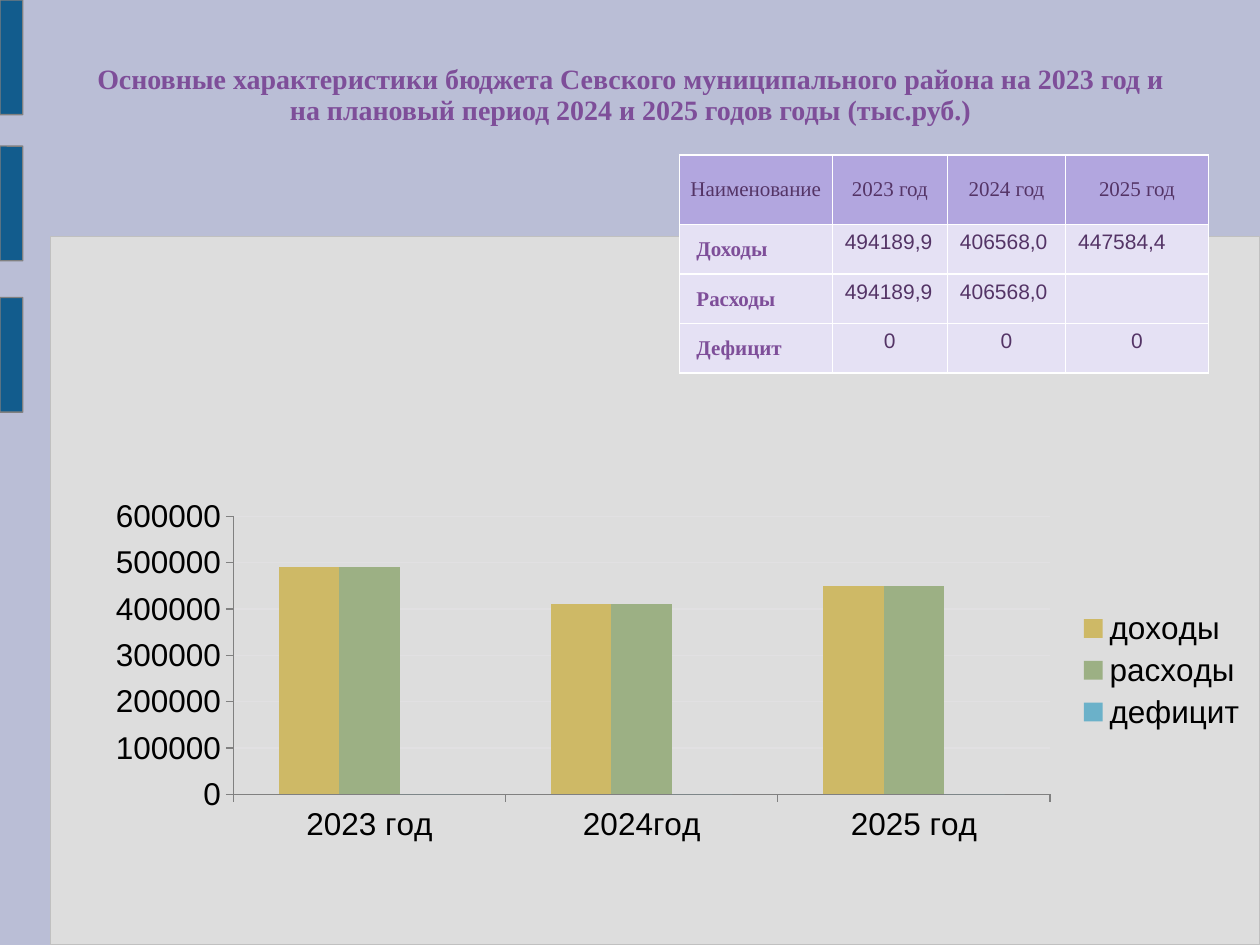
from lxml.etree import SubElement
from pptx import Presentation
from pptx.chart.data import CategoryChartData
from pptx.dml.color import RGBColor
from pptx.enum.chart import XL_CHART_TYPE as ChartType, XL_LEGEND_POSITION as LegendPosition, XL_TICK_MARK as TickMark
from pptx.enum.shapes import MSO_SHAPE as Shape
from pptx.enum.text import MSO_ANCHOR as Anchor, PP_ALIGN as Align
from pptx.oxml.ns import qn
from pptx.util import Pt

BACKGROUND = RGBColor(0xBA, 0xBE, 0xD6)
PANEL = RGBColor(0xDD, 0xDD, 0xDD)
PANEL_LINE = RGBColor(0xC0, 0xC0, 0xC0)
TAB = RGBColor(0x12, 0x5C, 0x8D)
GRAY = RGBColor(0x80, 0x80, 0x80)
PURPLE = RGBColor(0x7E, 0x4E, 0x99)
DARK_PURPLE = RGBColor(0x54, 0x34, 0x66)
HEADER_FILL = RGBColor(0xB2, 0xA6, 0xDF)
BODY_FILL = RGBColor(0xE5, 0xE1, 0xF4)
GRID = RGBColor(0xE1, 0xE0, 0xE2)
WHITE = RGBColor(0xFF, 0xFF, 0xFF)
BLACK = RGBColor(0, 0, 0)

TITLE = ("Основные характеристики бюджета Севского муниципального района на 2023 год "
         "и на плановый период 2024 и 2025 годов годы (тыс.руб.)")
ROWS = [
    ("Наименование", "2023 год", "2024 год", "2025 год"),
    ("Доходы", "494189,9", "406568,0", "447584,4"),
    ("Расходы", "494189,9", "406568,0", ""),
    ("Дефицит", "0", "0", "0"),
]
COLUMN_WIDTHS = [87.3, 65.8, 67.6, 81.5]
ROW_HEIGHTS = [39.8, 28.3, 28.3, 28.3]
CATEGORIES = ["2023 год", "2024год", "2025 год"]
SERIES = [
    ("доходы", (490000, 410000, 450000), RGBColor(0xCE, 0xB9, 0x66)),
    ("расходы", (490000, 410000, 450000), RGBColor(0x9C, 0xB0, 0x84)),
    ("дефицит", (0, 0, 0), RGBColor(0x6B, 0xB1, 0xC9)),
]
TAB_TOPS = [0, 83.5, 170]
TAB_WIDTH, TAB_HEIGHT = 13, 65.5

TITLE_FONT = {"name": "Times New Roman", "size": Pt(16), "bold": True}
HEADER_FONT = {"name": "Times New Roman", "size": Pt(12), "bold": False}
LABEL_FONT = {"name": "Times New Roman", "size": Pt(12), "bold": True}
NUMBER_FONT = {"name": "Arial", "size": Pt(12), "bold": False}
CHART_FONT = {"name": "Arial", "size": Pt(18), "bold": False}


def set_attributes(target, values):
    for name, value in values.items():
        setattr(target, name, value)


def set_font(font, values, color):
    set_attributes(font, values)
    font.color.rgb = color


def write(frame, text, font, color, align):
    para = frame.paragraphs[0]
    set_attributes(para, {"alignment": align, "line_spacing": 0.93})
    set_font(para.font, font, color)
    if text:
        span = para.add_run()
        span.text = text
        set_font(span.font, font, color)


def add_block(page, left, top, width, height, fill, line, rounding):
    block = page.shapes.add_shape(Shape.ROUNDED_RECTANGLE, Pt(left), Pt(top), Pt(width), Pt(height))
    block.adjustments[0] = rounding
    block.shadow.inherit = False
    block.fill.solid()
    block.fill.fore_color.rgb = fill
    block.line.color.rgb = line
    block.line.width = Pt(0.75)


def add_borders(cell):
    properties = cell._tc.get_or_add_tcPr()
    for index, side in enumerate(("a:lnL", "a:lnR", "a:lnT", "a:lnB")):
        line = SubElement(properties, qn(side), w=str(Pt(1)))
        fill = SubElement(line, qn("a:solidFill"))
        SubElement(fill, qn("a:srgbClr"), val=str(WHITE))
        properties.insert(index, line)


def add_title(page):
    box = page.shapes.add_textbox(Pt(52.8), Pt(21), Pt(615), Pt(67.5))
    set_attributes(box.text_frame, {
        "word_wrap": True, "vertical_anchor": Anchor.MIDDLE,
        "margin_left": 0, "margin_right": 0, "margin_top": 0, "margin_bottom": 0})
    write(box.text_frame, TITLE, TITLE_FONT, PURPLE, Align.CENTER)


def add_budget_table(page):
    table = page.shapes.add_table(len(ROWS), len(COLUMN_WIDTHS), Pt(388.3), Pt(88.5),
                                  Pt(sum(COLUMN_WIDTHS)), Pt(sum(ROW_HEIGHTS))).table
    for column, width in zip(table.columns, COLUMN_WIDTHS):
        column.width = Pt(width)
    for row, height in zip(table.rows, ROW_HEIGHTS):
        row.height = Pt(height)
    for r, texts in enumerate(ROWS):
        for c, text in enumerate(texts):
            cell = table.cell(r, c)
            cell.fill.solid()
            cell.fill.fore_color.rgb = BODY_FILL if r else HEADER_FILL
            add_borders(cell)
            align = Align.CENTER if r == 0 or text == "0" else Align.LEFT
            if r and c:
                cell.margin_top = Pt(4.5)
                font, color = NUMBER_FONT, DARK_PURPLE
            else:
                set_attributes(cell, {
                    "vertical_anchor": Anchor.MIDDLE, "margin_left": Pt(9.7 if r else 0.7),
                    "margin_right": Pt(0.7), "margin_top": Pt(0.9), "margin_bottom": 0})
                font, color = (LABEL_FONT, PURPLE) if r else (HEADER_FONT, DARK_PURPLE)
            write(cell.text_frame, text, font, color, align)


def add_budget_chart(page):
    data = CategoryChartData()
    data.categories = CATEGORIES
    for name, values, _ in SERIES:
        data.add_series(name, values)
    chart = page.shapes.add_chart(ChartType.COLUMN_CLUSTERED, Pt(52.8), Pt(280.8),
                                  Pt(667.2), Pt(204.5), data).chart
    set_font(chart.font, CHART_FONT, BLACK)
    set_attributes(chart, {"has_title": False, "has_legend": True})
    set_attributes(chart.legend, {"position": LegendPosition.RIGHT, "include_in_layout": False})
    plot = chart.plots[0]
    set_attributes(plot, {"gap_width": 150, "overlap": 0, "vary_by_categories": False})
    for series, (_, _, color) in zip(plot.series, SERIES):
        series.format.fill.solid()
        series.format.fill.fore_color.rgb = color
    for axis in (chart.category_axis, chart.value_axis):
        set_attributes(axis, {"major_tick_mark": TickMark.OUTSIDE, "minor_tick_mark": TickMark.NONE})
        axis.format.line.color.rgb = GRAY
        axis.format.line.width = Pt(0.75)
    set_attributes(chart.value_axis, {
        "minimum_scale": 0, "maximum_scale": 600000, "major_unit": 100000, "has_major_gridlines": True})
    chart.value_axis.tick_labels.number_format = "General"
    chart.value_axis.tick_labels.number_format_is_linked = False
    grid_line = chart.value_axis.major_gridlines.format.line
    grid_line.color.rgb = GRID
    grid_line.width = Pt(0.75)


def main():
    deck = Presentation()
    set_attributes(deck, {"slide_width": Pt(720), "slide_height": Pt(540)})
    page = deck.slides.add_slide(deck.slide_layouts[6])
    page.background.fill.solid()
    page.background.fill.fore_color.rgb = BACKGROUND
    add_block(page, 29, 135.2, 691, 404.8, PANEL, PANEL_LINE, 0)
    for top in TAB_TOPS:
        add_block(page, 0, top, TAB_WIDTH, TAB_HEIGHT, TAB, GRAY, 0.01)
    add_title(page)
    add_budget_table(page)
    add_budget_chart(page)
    deck.save("out.pptx")


if __name__ == "__main__":
    main()
